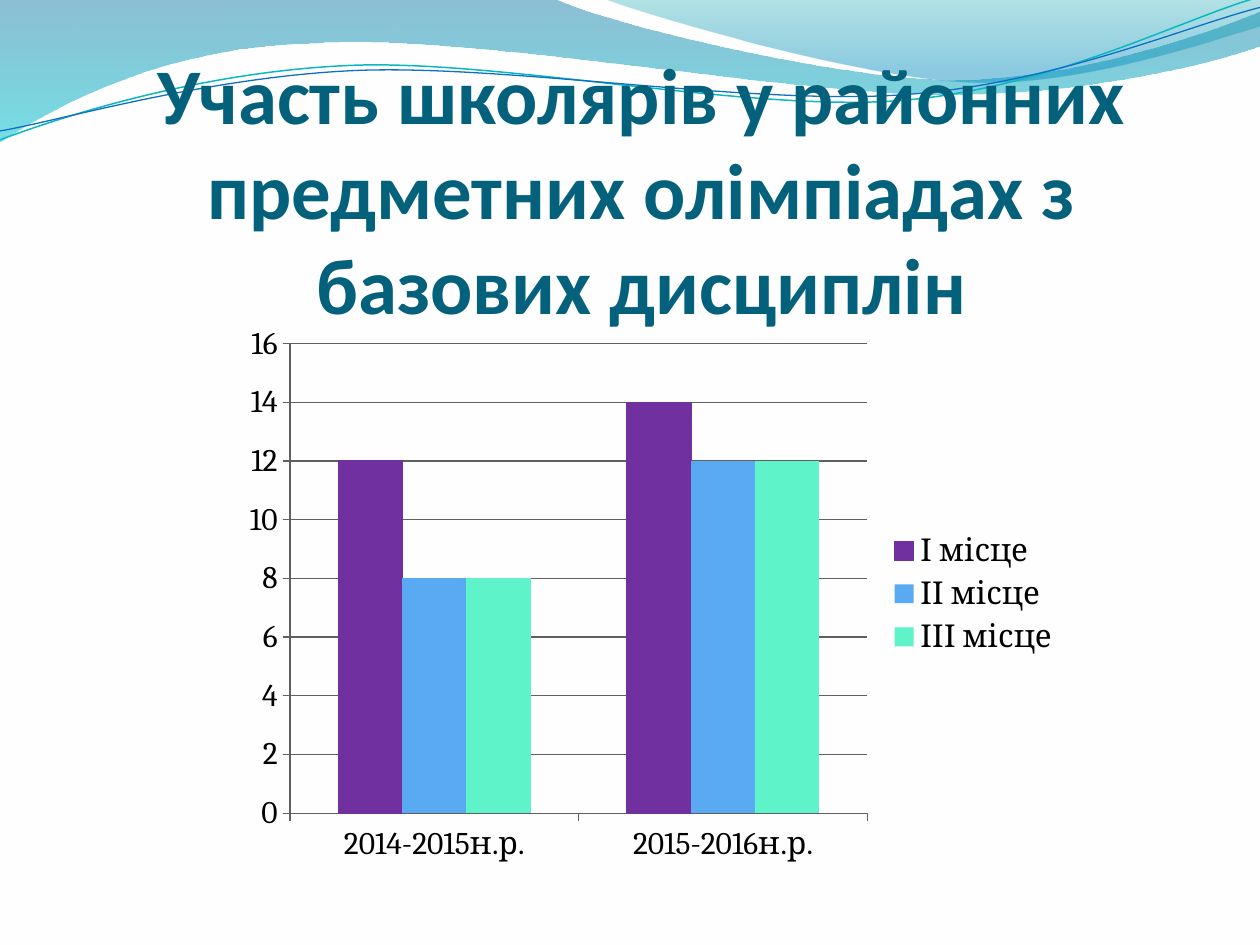
from dataclasses import dataclass
from math import cos, radians, sin

from lxml import etree
from pptx import Presentation
from pptx.chart.data import CategoryChartData
from pptx.dml.color import RGBColor
from pptx.enum.chart import XL_CHART_TYPE, XL_LEGEND_POSITION, XL_TICK_MARK
from pptx.enum.text import MSO_ANCHOR, PP_ALIGN
from pptx.oxml.ns import qn
from pptx.util import Cm, Pt

COLUMNS = XL_CHART_TYPE.COLUMN_CLUSTERED
LEGEND_RIGHT = XL_LEGEND_POSITION.RIGHT
TICK_OUTSIDE = XL_TICK_MARK.OUTSIDE
BOTTOM = MSO_ANCHOR.BOTTOM
CENTER = PP_ALIGN.CENTER
BLANK_LAYOUT = 6
WAVE_TILT = 2.7  # degrees, anticlockwise
WAVE_PIVOT = (12.68, 1.48)  # cm


@dataclass(frozen=True)
class Theme:
    background: str = "FFFEFF"
    title: str = "04617B"
    text: str = "000000"
    axis: str = "606060"
    teal_line: str = "0AB8BF"
    blue_line: str = "0F6FC6"
    places: tuple = ("7030A0", "59AAF2", "5FF3CA")
    # Gradient stops: position, colour, opacity in percent
    wide_band: tuple = ((0, "0074A1", 45), (1, "00C6CF", 55))
    right_band: tuple = ((0, "00A1A9", 30), (0.8, "008BBF", 45))
    title_font: str = "Calibri"
    chart_font: str = "Cambria"
    title_size: int = 45
    chart_size: int = 18


THEME = Theme()

# Outlines in cm: each step holds one point (straight) or three (Bézier)
WIDE_BAND = [
    [(0, 0)], [(11.18, -0.03)],
    [(12.09, 0.43), (16.87, 1.6), (19.25, 1.6)],
    [(21.67, 1.6), (24.33, 0.66), (25.4, 0.23)],
    [(25.43, 0.91)],
    [(24.97, 1.12), (22.1, 1.93), (18.95, 1.9)],
    [(15.8, 1.9), (9.7, 0.71), (6.53, 0.86)],
    [(3.28, 0.91), (1.17, 2.11), (-0.03, 2.87)],
    [(0, 0)],
]
RIGHT_BAND = [
    [(12.17, -0.03)],
    [(12.93, 0.28), (17.32, 1.57), (19.53, 1.65)],
    [(21.74, 1.75), (24.41, 0.81), (25.4, 0.53)],
    [(25.4, 0)], [(12.17, -0.03)],
]
TEAL_WAVE = [
    [(0, 2.82)],
    [(1.22, 2.36), (4.01, 1.45), (7.04, 1.32)],
    [(10.03, 1.19), (15.06, 2.26), (18.11, 2.03)],
    [(21.16, 1.8), (23.83, 0.38), (25.35, -0.05)],
]
BLUE_WAVE = [
    [(0, 2.64)],
    [(1.19, 2.44), (4.17, 1.55), (7.19, 1.42)],
    [(10.24, 1.3), (15.16, 2.13), (18.21, 1.91)],
    [(21.23, 1.7), (23.9, 0.53), (25.4, 0.15)],
]

TITLE = "Участь школярів у районних предметних олімпіадах з базових дисциплін"
YEARS = ["2014-2015н.р.", "2015-2016н.р."]
RESULTS = {"І місце": (12, 14), "ІІ місце": (8, 12), "ІІІ місце": (8, 12)}


def rgb(value):
    return RGBColor.from_string(value)


def set_format(target, values):
    for name, value in values.items():
        setattr(target, name, value)


def set_line(line, color, width):
    line.color.rgb = rgb(color)
    line.width = Pt(width)


def level(point):
    """Turn a point of a tilted wave back to its untilted place."""
    angle = radians(WAVE_TILT)
    x, y = (value - pivot for value, pivot in zip(point, WAVE_PIVOT))
    return (WAVE_PIVOT[0] + x * cos(angle) - y * sin(angle),
            WAVE_PIVOT[1] + x * sin(angle) + y * cos(angle))


def add_outline(page, outline, close):
    points = [(Cm(x), Cm(y)) for step in outline for x, y in step]
    builder = page.shapes.build_freeform(*points[0])
    builder.add_line_segments(points[1:], close=close)
    shape = builder.convert_to_shape()
    shape.shadow.inherit = False
    # Join the three points of each Bézier step into one curve
    segments = iter(list(shape.element.spPr.iter(qn("a:lnTo"))))
    for step in outline[1:]:
        first, *others = [next(segments) for _ in step]
        if others:
            first.tag = qn("a:cubicBezTo")
            for segment in others:
                first.append(segment[0])
                segment.getparent().remove(segment)
    return shape


def add_band(page, outline, stops):
    shape = add_outline(page, outline, True)
    shape.line.fill.background()
    shape.fill.gradient()
    shape.fill.gradient_angle = 270
    for stop, (position, color, _) in zip(shape.fill.gradient_stops, stops):
        stop.position = position
        stop.color.rgb = rgb(color)
    # Opacity of each gradient stop
    colors = shape.element.spPr.iter(qn("a:srgbClr"))
    for element, (_, _, opacity) in zip(colors, stops):
        etree.SubElement(element, qn("a:alpha"), val=str(opacity * 1000))


def add_wave(page, outline, color, width):
    level_outline = [[level(point) for point in step] for step in outline]
    shape = add_outline(page, level_outline, False)
    shape.rotation = 360 - WAVE_TILT
    shape.fill.background()
    set_line(shape.line, color, width)


def add_title(page):
    box = page.shapes.add_textbox(Cm(1.5), Cm(1.52), Cm(22.86), Cm(5.13))
    set_format(box.text_frame, {
        "word_wrap": True, "vertical_anchor": BOTTOM, "margin_left": 0,
        "margin_right": 0, "margin_top": Cm(0.13), "margin_bottom": 0})
    para = box.text_frame.paragraphs[0]
    para.alignment = CENTER
    span = para.add_run()
    span.text = TITLE
    set_format(span.font, {
        "name": THEME.title_font, "size": Pt(THEME.title_size), "bold": True})
    span.font.color.rgb = rgb(THEME.title)


def add_results_chart(page):
    data = CategoryChartData()
    data.categories = YEARS
    for name, values in RESULTS.items():
        data.add_series(name, values)
    chart = page.shapes.add_chart(
        COLUMNS, Cm(4.7), Cm(6.33), Cm(16.93), Cm(11.28), data).chart
    chart.has_title = False
    set_format(chart.font, {"name": THEME.chart_font, "size": Pt(THEME.chart_size)})
    chart.font.color.rgb = rgb(THEME.text)

    # Columns
    plot = chart.plots[0]
    set_format(plot, {"gap_width": 150, "overlap": 0, "vary_by_categories": False})
    for series, color in zip(plot.series, THEME.places):
        series.format.fill.solid()
        series.format.fill.fore_color.rgb = rgb(color)
    set_line(plot.series[0].format.line, THEME.places[0], 0.75)

    # Axes and legend
    for axis in (chart.category_axis, chart.value_axis):
        axis.major_tick_mark = TICK_OUTSIDE
        set_line(axis.format.line, THEME.axis, 0.75)
    set_format(chart.value_axis, {
        "minimum_scale": 0, "maximum_scale": 16, "major_unit": 2,
        "has_major_gridlines": True})
    set_line(chart.value_axis.major_gridlines.format.line, THEME.axis, 0.75)
    chart.has_legend = True
    set_format(chart.legend, {"position": LEGEND_RIGHT, "include_in_layout": False})


def main():
    deck = Presentation()
    set_format(deck, {"slide_width": Cm(25.4), "slide_height": Cm(19.05)})
    page = deck.slides.add_slide(deck.slide_layouts[BLANK_LAYOUT])
    page.background.fill.solid()
    page.background.fill.fore_color.rgb = rgb(THEME.background)

    # Wavy header
    add_band(page, WIDE_BAND, THEME.wide_band)
    add_band(page, RIGHT_BAND, THEME.right_band)
    add_wave(page, TEAL_WAVE, THEME.teal_line, 0.85)
    add_wave(page, BLUE_WAVE, THEME.blue_line, 0.75)

    # Content
    add_title(page)
    add_results_chart(page)
    deck.save("out.pptx")


if __name__ == "__main__":
    main()
